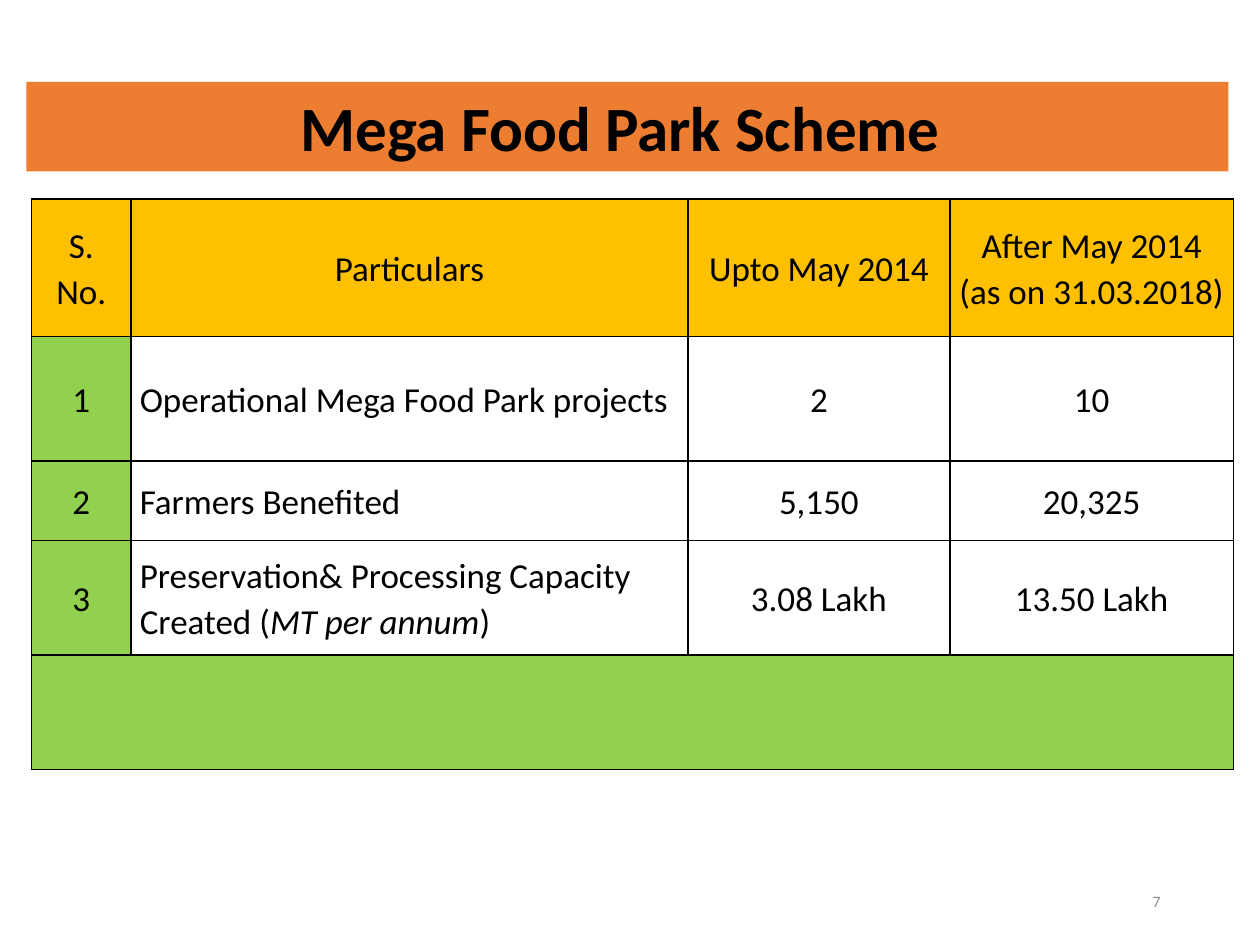
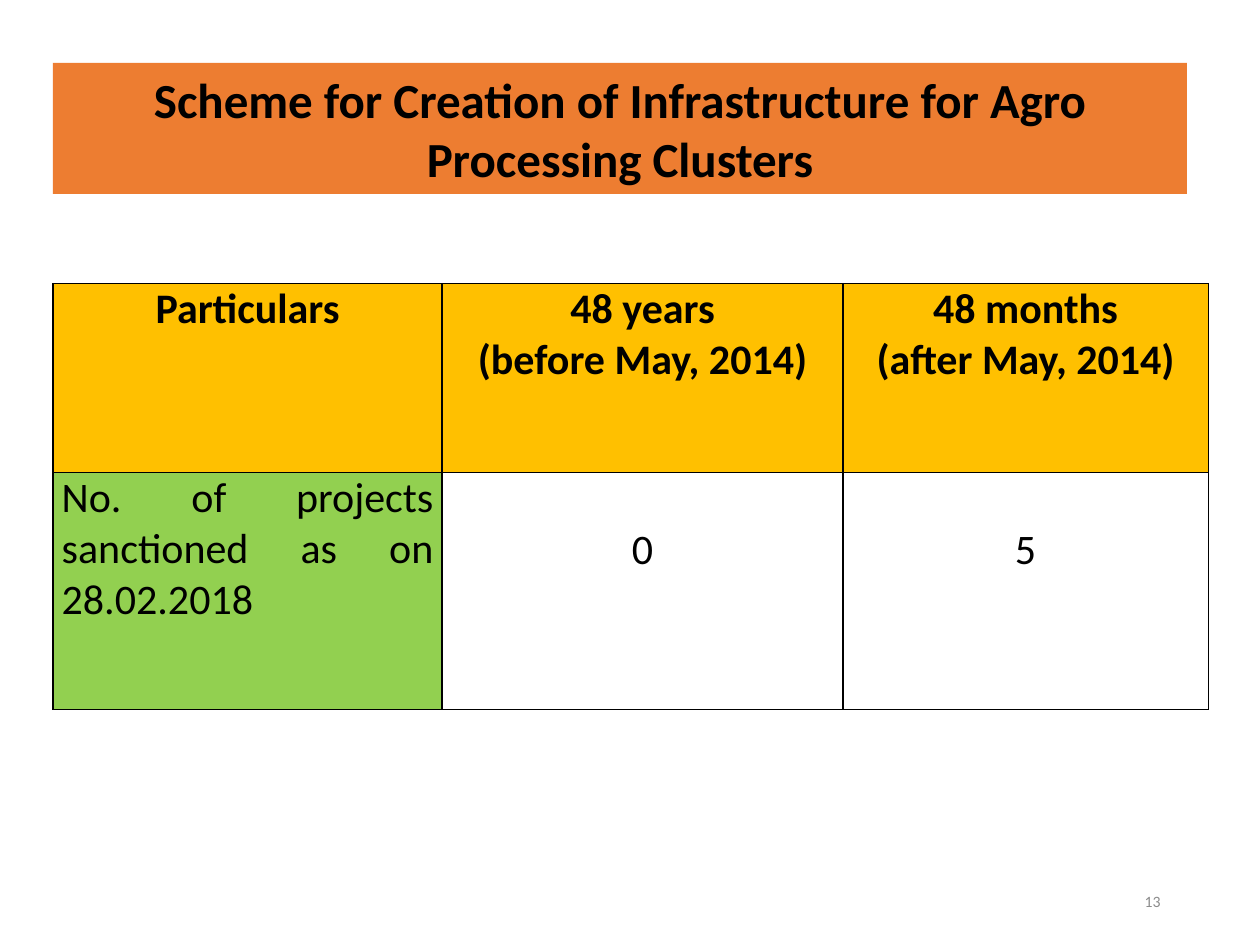
from dataclasses import dataclass

from lxml import etree
from pptx import Presentation
from pptx.dml.color import RGBColor
from pptx.enum import shapes, text
from pptx.oxml.ns import qn
from pptx.util import Inches, Pt


@dataclass(frozen=True)
class Theme:
    font: str = "Calibri"
    band: str = "ED7D31"
    header: str = "FFC000"
    label: str = "92D050"
    ink: str = "000000"
    muted: str = "8C8C8C"
    scheme_title: int = 36
    cluster_title: int = 28
    scheme_cell: int = 20
    cluster_cell: int = 24
    number: int = 9
    border: int = 1


T = Theme()
LEFT, CENTER, RIGHT, JUSTIFY = (
    text.PP_ALIGN.LEFT, text.PP_ALIGN.CENTER, text.PP_ALIGN.RIGHT, text.PP_ALIGN.JUSTIFY)
TOP, MIDDLE = text.MSO_ANCHOR.TOP, text.MSO_ANCHOR.MIDDLE


def style(p, size, align, color=T.ink, bold=False):
    p.alignment = align
    f = p.font
    f.name, f.size, f.bold = T.font, Pt(size), bold
    f.color.rgb = RGBColor.from_string(color)


def add_title(s, title, box, size):
    sp = s.shapes.add_shape(shapes.MSO_SHAPE.RECTANGLE, *map(Inches, box))
    sp.shadow.inherit = False
    sp.fill.solid()
    sp.fill.fore_color.rgb = RGBColor.from_string(T.band)
    sp.line.fill.background()
    tf = sp.text_frame
    tf.word_wrap = True
    tf.auto_size = text.MSO_AUTO_SIZE.SHAPE_TO_FIT_TEXT
    tf.vertical_anchor = MIDDLE
    p = tf.paragraphs[0]
    p.add_run().text = title
    style(p, size, CENTER, bold=True)


def add_slide_number(s, number):
    sp = s.shapes.add_textbox(Inches(7.06), Inches(6.95), Inches(2.25), Inches(0.4))
    tf = sp.text_frame
    tf.word_wrap = True
    tf.vertical_anchor = MIDDLE
    p = tf.paragraphs[0]
    p.add_run().text = str(number)
    style(p, T.number, RIGHT, T.muted)


def add_table(s, left, top, widths, heights):
    frame = s.shapes.add_table(
        len(heights), len(widths), Inches(left), Inches(top),
        Inches(sum(widths)), Inches(sum(heights)))
    table = frame.table
    table.first_row = table.horz_banding = False
    for col, width in zip(table.columns, widths):
        col.width = Inches(width)
    for row, height in zip(table.rows, heights):
        row.height = Inches(height)
    return table


def format_cell(cell, fill, anchor):
    cell.margin_left = cell.margin_right = Inches(0.07)
    cell.margin_top = cell.margin_bottom = 0
    cell.vertical_anchor = anchor
    if fill:
        cell.fill.solid()
        cell.fill.fore_color.rgb = RGBColor.from_string(fill)
    else:
        cell.fill.background()
    tc_pr = cell._tc.get_or_add_tcPr()
    for i, side in enumerate(("lnL", "lnR", "lnT", "lnB")):
        ln = etree.Element(qn(f"a:{side}"), w=str(Pt(T.border)))
        solid = etree.SubElement(ln, qn("a:solidFill"))
        etree.SubElement(solid, qn("a:srgbClr"), val=T.ink)
        tc_pr.insert(i, ln)


def write_cell(cell, lines, size, align, bold=False, spacing=None):
    tf = cell.text_frame
    for i, runs in enumerate(lines):
        p = tf.add_paragraph() if i else tf.paragraphs[0]
        for content, italic in runs:
            r = p.add_run()
            r.text = content
            if italic:
                r.font.italic = True
        style(p, size, align, bold=bold)
        if spacing:
            p.line_spacing = spacing


def plain(*lines):
    return [[(line, False)] for line in lines]


def fill_for(row, col):
    if row == 0:
        return T.header
    return T.label if col == 0 else None


def add_scheme_slide(prs):
    s = prs.slides.add_slide(prs.slide_layouts[6])
    rows = [
        [plain(h) for h in ("S. No.", "Particulars", "Upto May 2014",
                            "After May 2014 (as on 31.03.2018)")],
        [plain(c) for c in ("1", "Operational Mega Food Park projects", "2", "10")],
        [plain(c) for c in ("2", "Farmers Benefited", "5,150", "20,325")],
        [plain("3"),
         [[("Preservation& Processing Capacity Created (", False),
           ("MT per annum", True), (")", False)]],
         plain("3.08 Lakh"), plain("13.50 Lakh")],
    ]
    table = add_table(s, 0.25, 1.58, (0.79, 4.42, 2.08, 2.25),
                      (1.09, 0.99, 0.63, 0.91, 0.91))
    for i, row in enumerate(rows):
        for j, lines in enumerate(row):
            cell = table.cell(i, j)
            format_cell(cell, fill_for(i, j), MIDDLE)
            align = LEFT if i and j == 1 else CENTER
            write_cell(cell, lines, T.scheme_cell, align, spacing=1.07)
    last = len(rows)
    for j in range(len(table.columns)):
        format_cell(table.cell(last, j), T.label, MIDDLE)
    table.cell(last, 0).merge(table.cell(last, len(table.columns) - 1))
    add_title(s, "Mega Food Park Scheme ", (0.21, 0.65, 9.54, 0.71), T.scheme_title)
    add_slide_number(s, 7)


def add_cluster_slide(prs):
    s = prs.slides.add_slide(prs.slide_layouts[6])
    rows = [
        [plain("Particulars"), plain("48 years", "(before May, 2014)"),
         plain("48 months", "(after May, 2014)")],
        [plain("No. of projects sanctioned as on 28.02.2018"), plain("0"), plain("5")],
    ]
    table = add_table(s, 0.42, 2.25, (3.09, 3.18, 2.9), (1.5, 1.88))
    for i, row in enumerate(rows):
        for j, lines in enumerate(row):
            cell = table.cell(i, j)
            format_cell(cell, fill_for(i, j), TOP)
            if i and j:
                cell.margin_top = Inches(0.41)
            align = JUSTIFY if i and j == 0 else CENTER
            write_cell(cell, lines, T.cluster_cell, align, bold=i == 0)
    add_title(s, "Scheme for Creation of Infrastructure for Agro Processing Clusters",
              (0.42, 0.5, 9, 1.04), T.cluster_title)
    add_slide_number(s, 13)


def main():
    prs = Presentation()
    prs.slide_width, prs.slide_height = Inches(10), Inches(7.5)
    add_scheme_slide(prs)
    add_cluster_slide(prs)
    prs.save("out.pptx")


if __name__ == "__main__":
    main()
